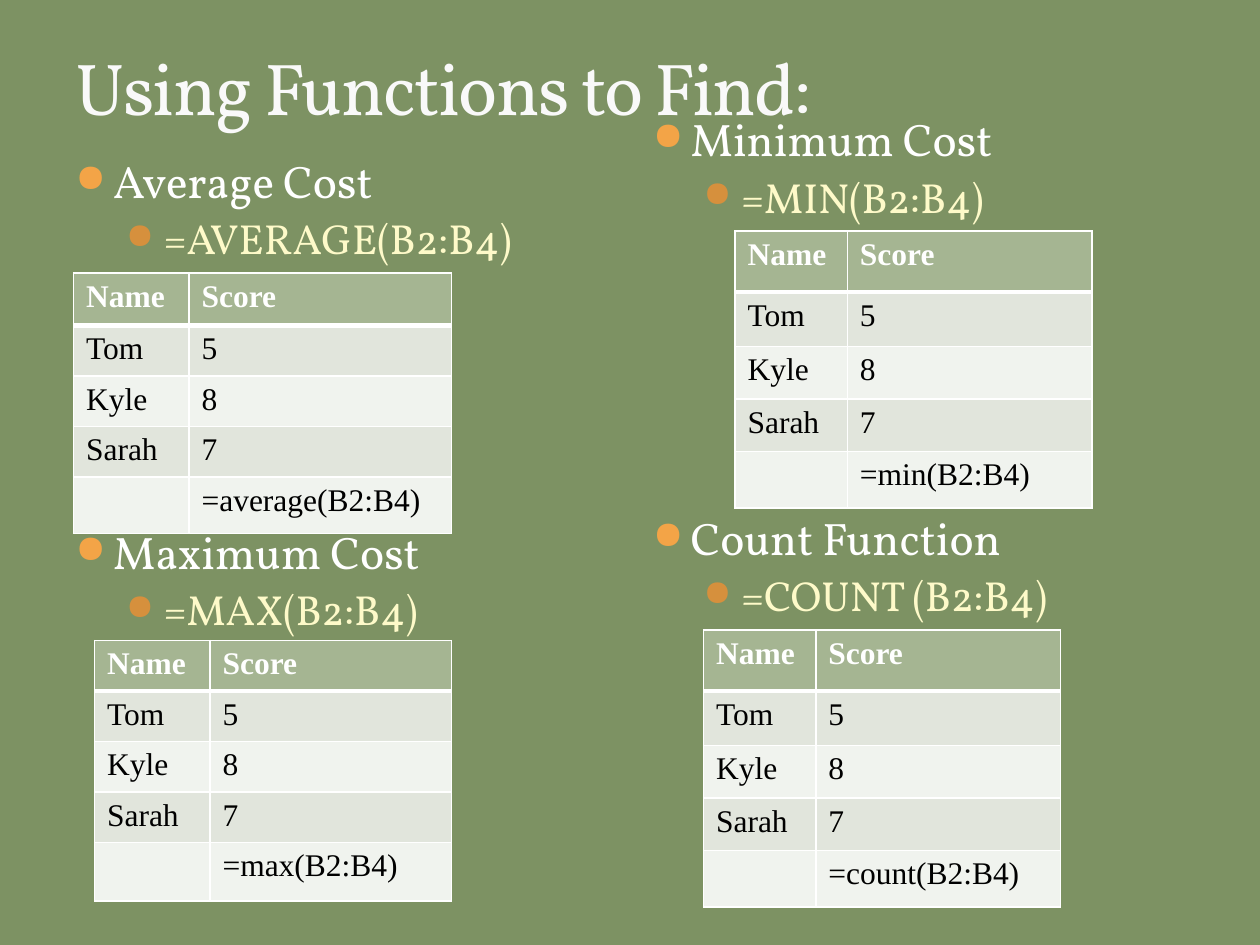
"""Build a slide of four spreadsheet functions, each with a heading and a score table."""
from dataclasses import dataclass

from lxml import etree
from pptx import Presentation
from pptx.dml.color import RGBColor
from pptx.enum.text import MSO_ANCHOR
from pptx.oxml.ns import qn
from pptx.util import Inches, Pt

BOTTOM, TOP = MSO_ANCHOR.BOTTOM, MSO_ANCHOR.TOP
WIDTH, HEIGHT = Inches(10), Inches(7.5)
COLUMNS, ROWS = 120, 90


@dataclass(frozen=True)
class Theme:
    background: str = "7D9263"
    title: str = "F9F9F9"
    outline: str = "3C4422"
    white: str = "FFFFFF"
    black: str = "000000"
    formula: str = "FEFAC9"
    bullet: str = "F3A447"
    sub_bullet: str = "D6903D"
    header: str = "A5B592"
    band: str = "E1E5DC"
    light: str = "F0F3EE"
    display: str = "Vollkorn"
    table: str = "Times New Roman"
    title_size: int = 42
    heading_size: int = 26
    formula_size: int = 24
    table_size: int = 18


@dataclass(frozen=True)
class Grid:
    """Table place, column widths and row heights in grid units."""
    col: float
    row: float
    widths: tuple[float, ...]
    heights: tuple[float, ...]


@dataclass(frozen=True)
class Example:
    heading: str
    formula: str
    total: str
    col: float
    row: float
    grid: Grid


THEME = Theme()
SCORES = (("Name", "Score"), ("Tom", "5"), ("Kyle", "8"), ("Sarah", "7"))
RIGHT_WIDTHS = (10.7, 23.3)
RIGHT_HEIGHTS = (5.8, 5.2, 5, 5, 5.4)
EXAMPLES = (
    Example("Average Cost", "=AVERAGE(B2:B4)", "=average(B2:B4)", 6, 14,
            Grid(7, 26, (11, 25), (5, 4.7, 4.6, 4.5, 5.4))),
    Example("Maximum Cost", "=MAX(B2:B4)", "=max(B2:B4)", 6, 49.3,
            Grid(9, 61, (11, 23), (4.6, 4.7, 4.6, 4.6, 5.6))),
    Example("Minimum Cost", "=MIN(B2:B4)", "=min(B2:B4)", 61, 10,
            Grid(70, 22, RIGHT_WIDTHS, RIGHT_HEIGHTS)),
    Example("Count Function", "=COUNT (B2:B4)", "=count(B2:B4)", 61, 48,
            Grid(67, 60, RIGHT_WIDTHS, RIGHT_HEIGHTS)),
)


def across(units: float) -> int:
    return int(WIDTH * units / COLUMNS)


def down(units: float) -> int:
    return int(HEIGHT * units / ROWS)


def apply(target, values: dict) -> None:
    for name, value in values.items():
        setattr(target, name, value)


def add_node(parent, tag: str, **attributes: str):
    node = etree.SubElement(parent, qn(tag))
    for name, value in attributes.items():
        node.set(name, value)
    return node


def add_solid(parent, color: str):
    return add_node(add_node(parent, "a:solidFill"), "a:srgbClr", val=color)


def add_run(p, text: str, font: str, size: float, color: str, bold: bool = False):
    r = p.add_run()
    r.text = text
    apply(r.font, {"name": font, "size": Pt(size), "bold": bold})
    r.font.color.rgb = RGBColor.from_string(color)
    return r


def add_text(s, col: float, row: float, width: float, height: float, anchor):
    sp = s.shapes.add_textbox(across(col), down(row), across(width), down(height))
    apply(sp.text_frame, {"word_wrap": True, "vertical_anchor": anchor})
    return sp.text_frame


def add_title(s, text: str) -> None:
    tf = add_text(s, 6, 2, 108, 11, BOTTOM)
    r = add_run(tf.paragraphs[0], text, THEME.display, THEME.title_size, THEME.title)
    r_pr = r.font._element
    r_pr.set("spc", "-100")
    line = add_node(r_pr, "a:ln", w=str(Pt(0.25)))
    add_node(add_solid(line, THEME.outline), "a:alpha", val="25000")
    r_pr.insert(0, line)


def format_bullet(p, indent: float, before: float, color: str) -> None:
    p.space_before = Pt(before)
    p_pr = p._p.get_or_add_pPr()
    apply_indent = {"marL": Inches(indent), "indent": Inches(-0.3)}
    for name, value in apply_indent.items():
        p_pr.set(name, str(value))
    add_node(add_node(p_pr, "a:buClr"), "a:srgbClr", val=color)
    add_node(p_pr, "a:buSzPct", val="85000")
    add_node(p_pr, "a:buChar", char="●")


def add_heading(s, example: Example) -> None:
    tf = add_text(s, example.col, example.row, 53.3, 12, TOP)
    p = tf.paragraphs[0]
    format_bullet(p, 0.3, 6, THEME.bullet)
    add_run(p, example.heading, THEME.display, THEME.heading_size, THEME.white)
    p = tf.add_paragraph()
    p.level = 1
    format_bullet(p, 0.7, 3, THEME.sub_bullet)
    add_run(p, example.formula, THEME.display, THEME.formula_size, THEME.formula)


def format_cell(cell, text: str, row: int) -> None:
    header = row == 0
    tc_pr = cell._tc.get_or_add_tcPr()
    widths = {"L": 1, "R": 1, "T": 3 if row == 1 else 1, "B": 3 if header else 1}
    for side, width in widths.items():
        add_solid(add_node(tc_pr, f"a:ln{side}", w=str(Pt(width))), THEME.white)
    fill = THEME.header if header else (THEME.light, THEME.band)[row % 2]
    cell.fill.solid()
    cell.fill.fore_color.rgb = RGBColor.from_string(fill)
    if text:
        color = THEME.white if header else THEME.black
        add_run(cell.text_frame.paragraphs[0], text, THEME.table,
                THEME.table_size, color, header)


def add_scores(s, example: Example) -> None:
    grid = example.grid
    data = (*SCORES, ("", example.total))
    table = s.shapes.add_table(
        len(data), len(grid.widths), across(grid.col), down(grid.row),
        across(sum(grid.widths)), down(sum(grid.heights))).table
    apply(table, {"first_row": False, "horz_banding": False})
    for column, width in zip(table.columns, grid.widths):
        column.width = across(width)
    for i, (row, height) in enumerate(zip(table.rows, grid.heights)):
        row.height = down(height)
        for cell, text in zip(row.cells, data[i]):
            format_cell(cell, text, i)


def main() -> None:
    prs = Presentation()
    apply(prs, {"slide_width": WIDTH, "slide_height": HEIGHT})
    s = prs.slides.add_slide(prs.slide_layouts[6])
    s.background.fill.solid()
    s.background.fill.fore_color.rgb = RGBColor.from_string(THEME.background)
    add_title(s, "Using Functions to Find:")
    for example in EXAMPLES:
        add_heading(s, example)
    for example in EXAMPLES:
        add_scores(s, example)
    prs.save("out.pptx")


if __name__ == "__main__":
    main()
